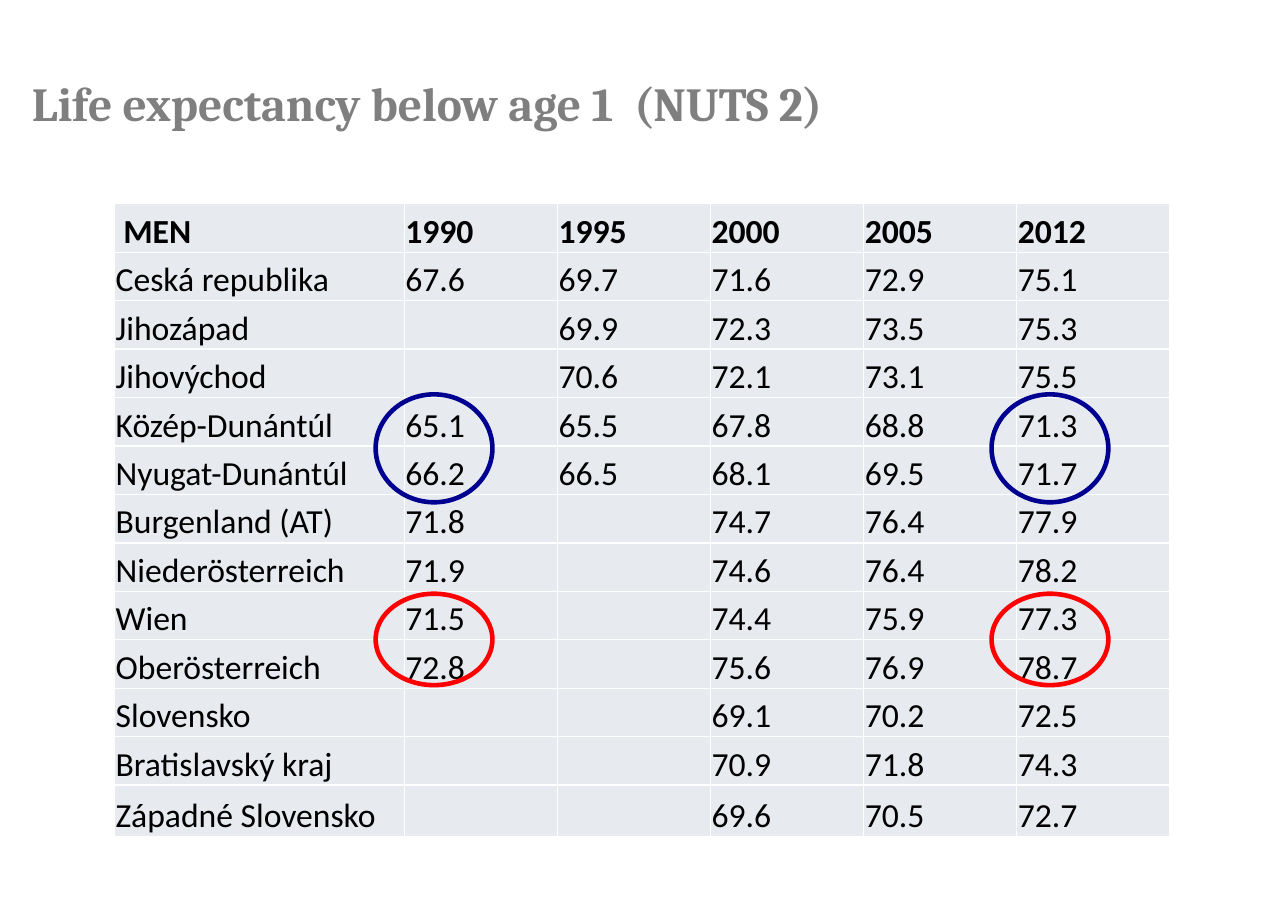
"""Build the slide on men's life expectancy by NUTS 2 region."""
from dataclasses import dataclass

from lxml import etree
from pptx import Presentation
from pptx.dml.color import RGBColor
from pptx.enum.shapes import MSO_SHAPE
from pptx.enum.text import MSO_ANCHOR
from pptx.oxml.ns import qn
from pptx.slide import Slide
from pptx.table import _Cell
from pptx.util import Inches, Pt

OVAL = MSO_SHAPE.OVAL
TOP, BOTTOM = MSO_ANCHOR.TOP, MSO_ANCHOR.BOTTOM


@dataclass(frozen=True)
class Theme:
    """Colours, fonts and sizes of the slide."""
    title_font: str = "Cambria"
    body_font: str = "Calibri"
    title_size: int = 31
    title_leading: int = 34
    body_size: int = 22
    border_width: int = 1
    ring_width: int = 3
    title: str = "7F7F7F"
    text: str = "000000"
    cell: str = "E7EAEF"
    border: str = "FFFFFF"
    hungary: str = "000090"
    austria: str = "FF0000"


@dataclass(frozen=True)
class Region:
    """One region with a value for each year, blank where unknown."""
    name: str
    values: tuple[str, ...]


@dataclass(frozen=True)
class RingPair:
    """Rings at one height around the first and last year."""
    top: float
    height: float
    color: str


THEME = Theme()
YEARS = ("1990", "1995", "2000", "2005", "2012")
REGIONS = (
    Region("Ceská republika", ("67.6", "69.7", "71.6", "72.9", "75.1")),
    Region("Jihozápad", ("", "69.9", "72.3", "73.5", "75.3")),
    Region("Jihovýchod", ("", "70.6", "72.1", "73.1", "75.5")),
    Region("Közép-Dunántúl", ("65.1", "65.5", "67.8", "68.8", "71.3")),
    Region("Nyugat-Dunántúl", ("66.2", "66.5", "68.1", "69.5", "71.7")),
    Region("Burgenland (AT)", ("71.8", "", "74.7", "76.4", "77.9")),
    Region("Niederösterreich", ("71.9", "", "74.6", "76.4", "78.2")),
    Region("Wien", ("71.5", "", "74.4", "75.9", "77.3")),
    Region("Oberösterreich", ("72.8", "", "75.6", "76.9", "78.7")),
    Region("Slovensko", ("", "", "69.1", "70.2", "72.5")),
    Region("Bratislavský kraj", ("", "", "70.9", "71.8", "74.3")),
    Region("Západné Slovensko", ("", "", "69.6", "70.5", "72.7")),
)
RING_PAIRS = (RingPair(3.58, 0.98, THEME.hungary), RingPair(5.39, 0.83, THEME.austria))
RING_LEFTS = (3.41, 9.0)
RING_WIDTH = 1.06
NAME_WIDTH, YEAR_WIDTH = 2.63, 1.39
ROW_HEIGHT, LAST_ROW_HEIGHT = 0.44, 0.47


def add_title(s: Slide, text: str) -> None:
    """Add the slide heading."""
    sp = s.shapes.add_textbox(Inches(0.18), Inches(0.67), Inches(10.08), Inches(0.59))
    tf = sp.text_frame
    tf.word_wrap = True
    tf.vertical_anchor = TOP
    tf.margin_left = tf.margin_right = Inches(0.11)
    p = tf.paragraphs[0]
    p.line_spacing = Pt(THEME.title_leading)
    r = p.add_run()
    r.text = text
    r.font.name = THEME.title_font
    r.font.size = Pt(THEME.title_size)
    r.font.bold = True
    r.font.color.rgb = RGBColor.from_string(THEME.title)


def add_borders(cell: _Cell) -> None:
    """Draw a thin line on all four sides of a cell."""
    tc_pr = cell._tc.get_or_add_tcPr()
    for side in ("a:lnL", "a:lnR", "a:lnT", "a:lnB"):
        ln = etree.SubElement(tc_pr, qn(side), w=str(Pt(THEME.border_width)))
        fill = etree.SubElement(ln, qn("a:solidFill"))
        etree.SubElement(fill, qn("a:srgbClr"), val=THEME.border)


def fill_cell(cell: _Cell, text: str, bold: bool) -> None:
    """Style a cell and write its text if there is any."""
    add_borders(cell)
    cell.fill.solid()
    cell.fill.fore_color.rgb = RGBColor.from_string(THEME.cell)
    cell.vertical_anchor = BOTTOM
    cell.margin_left = cell.margin_right = cell.margin_top = Inches(0.01)
    cell.margin_bottom = 0
    if text:
        r = cell.text_frame.paragraphs[0].add_run()
        r.text = text
        r.font.name = THEME.body_font
        r.font.size = Pt(THEME.body_size)
        r.font.bold = bold
        r.font.color.rgb = RGBColor.from_string(THEME.text)


def add_region_table(s: Slide) -> None:
    """Add the table of regions and years."""
    rows = [(" MEN", *YEARS)] + [(region.name, *region.values) for region in REGIONS]
    widths = [NAME_WIDTH] + [YEAR_WIDTH] * len(YEARS)
    heights = [ROW_HEIGHT] * len(REGIONS) + [LAST_ROW_HEIGHT]
    table = s.shapes.add_table(
        len(rows), len(widths), Inches(1.04), Inches(1.85),
        Inches(sum(widths)), Inches(sum(heights)),
    ).table
    table.horz_banding = False
    for column, width in zip(table.columns, widths):
        column.width = Inches(width)
    for row, height in zip(table.rows, heights):
        row.height = Inches(height)
    for i, texts in enumerate(rows):
        for j, text in enumerate(texts):
            fill_cell(table.cell(i, j), text, bold=i == 0)


def add_ring(s: Slide, left: float, pair: RingPair) -> None:
    """Add one unfilled ring."""
    sp = s.shapes.add_shape(
        OVAL, Inches(left), Inches(pair.top), Inches(RING_WIDTH), Inches(pair.height)
    )
    sp.shadow.inherit = False
    sp.fill.background()
    sp.line.color.rgb = RGBColor.from_string(pair.color)
    sp.line.width = Pt(THEME.ring_width)


def main() -> None:
    """Build and save the presentation."""
    prs = Presentation()
    prs.slide_width, prs.slide_height = Inches(11.69), Inches(8.27)
    s = prs.slides.add_slide(prs.slide_layouts[6])
    add_title(s, "Life expectancy below age 1  (NUTS 2)")
    add_region_table(s)
    for pair in RING_PAIRS:
        for left in RING_LEFTS:
            add_ring(s, left, pair)
    prs.save("out.pptx")


if __name__ == "__main__":
    main()
